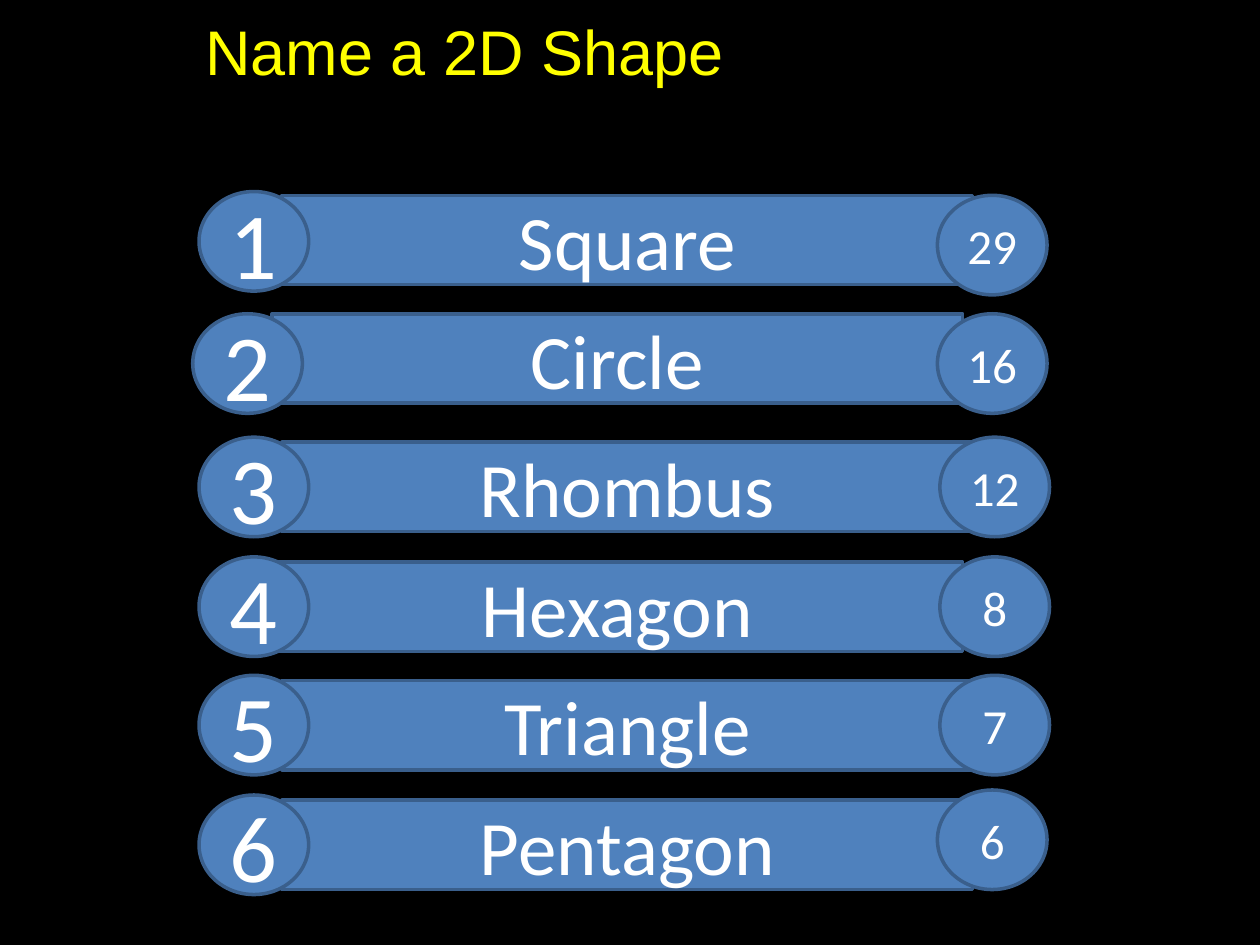
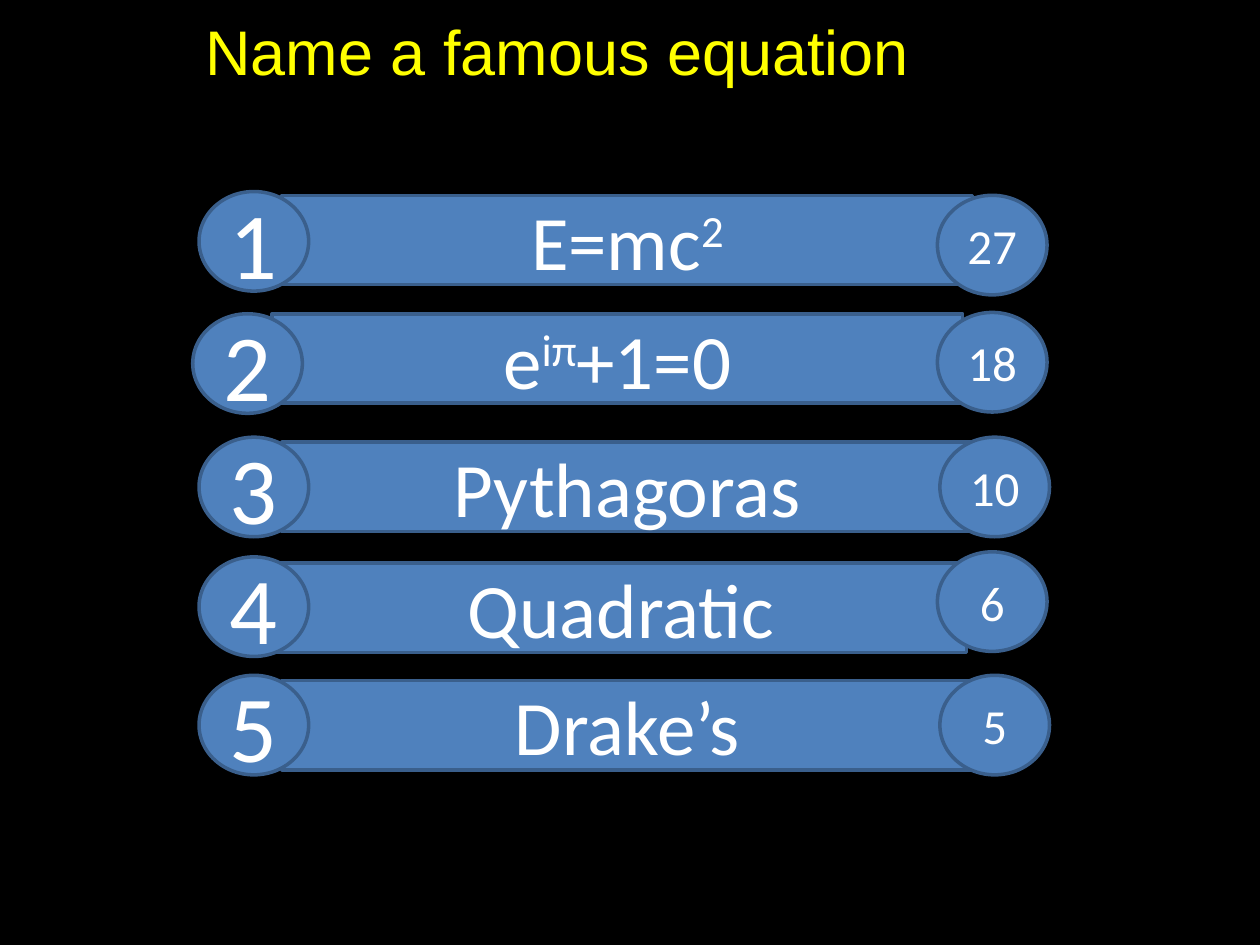
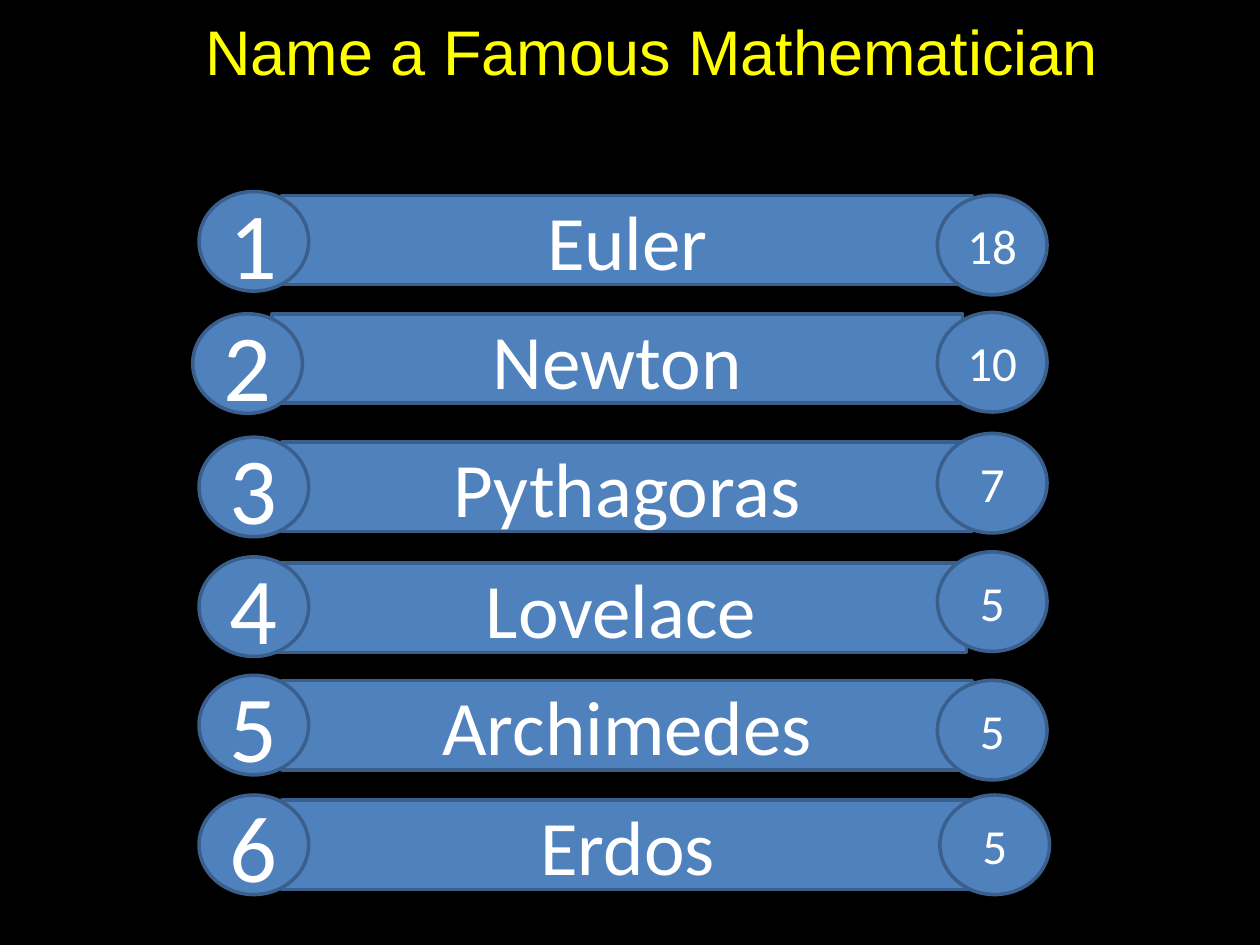
import pptx
import pptx.util
import pptx.dml.color
import pptx.enum.shapes
import pptx.enum.text

Inches = pptx.util.Inches
COLORS = {"background": "000000", "fill": "4F81BD", "line": "3A5F8C",
          "text": "FFFFFF", "title": "FFFF00"}
RECT = pptx.enum.shapes.MSO_SHAPE.RECTANGLE
OVAL = pptx.enum.shapes.MSO_SHAPE.OVAL

BAR_W, BAR_H = 5.48, 0.71
OVAL_W, OVAL_H = 0.87, 0.79
BAR_TOPS = [1.55, 2.49, 3.51, 4.46, 5.4, 6.35]
BAR_LEFTS = [2.24, 2.16, 2.24, 2.16, 2.24, 2.24]
NUMBER_TOPS = [1.52, 2.49, 3.47, 4.42, 5.36, 6.31]
NUMBER_LEFTS = [1.58, 1.53, 1.58, 1.58, 1.58, 1.58]

BOARDS = [
    {"title": "Name a 2D Shape", "fourth_bar": (2.16, 4.46), "answers": [
        ("Square", "29", 7.44, 1.55),
        ("Circle", "16", 7.44, 2.49),
        ("Rhombus", "12", 7.46, 3.47),
        ("Hexagon", "8", 7.46, 4.42),
        ("Triangle", "7", 7.46, 5.36),
        ("Pentagon", "6", 7.44, 6.27)]},
    {"title": "Name a famous equation", "fourth_bar": (2.19, 4.47), "answers": [
        ("E=mc^2", "27", 7.44, 1.55),
        ("e^iπ^+1=0", "18", 7.44, 2.48),
        ("Pythagoras", "10", 7.46, 3.47),
        ("Quadratic", "6", 7.44, 4.38),
        ("Drake’s", "5", 7.46, 5.36)]},
    {"title": "Name a Famous Mathematician", "fourth_bar": (2.19, 4.47), "answers": [
        ("Euler", "18", 7.44, 1.55),
        ("Newton", "10", 7.44, 2.48),
        ("Pythagoras", "7", 7.44, 3.44),
        ("Lovelace", "5", 7.44, 4.38),
        ("Archimedes", "5", 7.44, 5.4),
        ("Erdos", "5", 7.46, 6.31)]},
]


def rgb(name):
    return pptx.dml.color.RGBColor.from_string(COLORS[name])


def add_text(s, text, x, y, w, h, shape=None, size=44, font="Calibri", color="text"):
    box = [Inches(v) for v in (x, y, w, h)]
    if shape is None:
        sp = s.shapes.add_textbox(*box)
    else:
        sp = s.shapes.add_shape(shape, *box)
        sp.shadow.inherit = False
        sp.fill.solid()
        sp.fill.fore_color.rgb = rgb("fill")
        sp.line.color.rgb = rgb("line")
        sp.line.width = pptx.util.Pt(2)
    tf = sp.text_frame
    tf.word_wrap = True
    p = tf.paragraphs[0]
    if shape is not None:
        tf.vertical_anchor = pptx.enum.text.MSO_ANCHOR.MIDDLE
        p.alignment = pptx.enum.text.PP_ALIGN.CENTER
    for i, part in enumerate(text.split("^")):
        r = p.add_run()
        r.text = part
        r.font.size = pptx.util.Pt(size)
        r.font.name = font
        r.font.color.rgb = rgb(color)
        if i % 2:
            r._r.get_or_add_rPr().set("baseline", "30000")
    return sp


prs = pptx.Presentation()
prs.slide_width = Inches(10)
prs.slide_height = Inches(7.5)

for board in BOARDS:
    s = prs.slides.add_slide(prs.slide_layouts[6])
    s.background.fill.solid()
    s.background.fill.fore_color.rgb = rgb("background")

    for i, (answer, score, score_x, score_y) in enumerate(board["answers"]):
        bar_x, bar_y = board["fourth_bar"] if i == 3 else (BAR_LEFTS[i], BAR_TOPS[i])
        add_text(s, answer, bar_x, bar_y, BAR_W, BAR_H, shape=RECT)
        add_text(s, str(i + 1), NUMBER_LEFTS[i], NUMBER_TOPS[i], OVAL_W, OVAL_H,
                 shape=OVAL, size=54)
        add_text(s, score, score_x, score_y, OVAL_W, OVAL_H, shape=OVAL, size=28)

    title = add_text(s, board["title"], 1.53, 0, 8.19, 0.7,
                     size=36, font="Arial", color="title")
    title.text_frame.margin_top = Inches(0.1)
    title.text_frame.margin_bottom = 0

prs.save("out.pptx")
